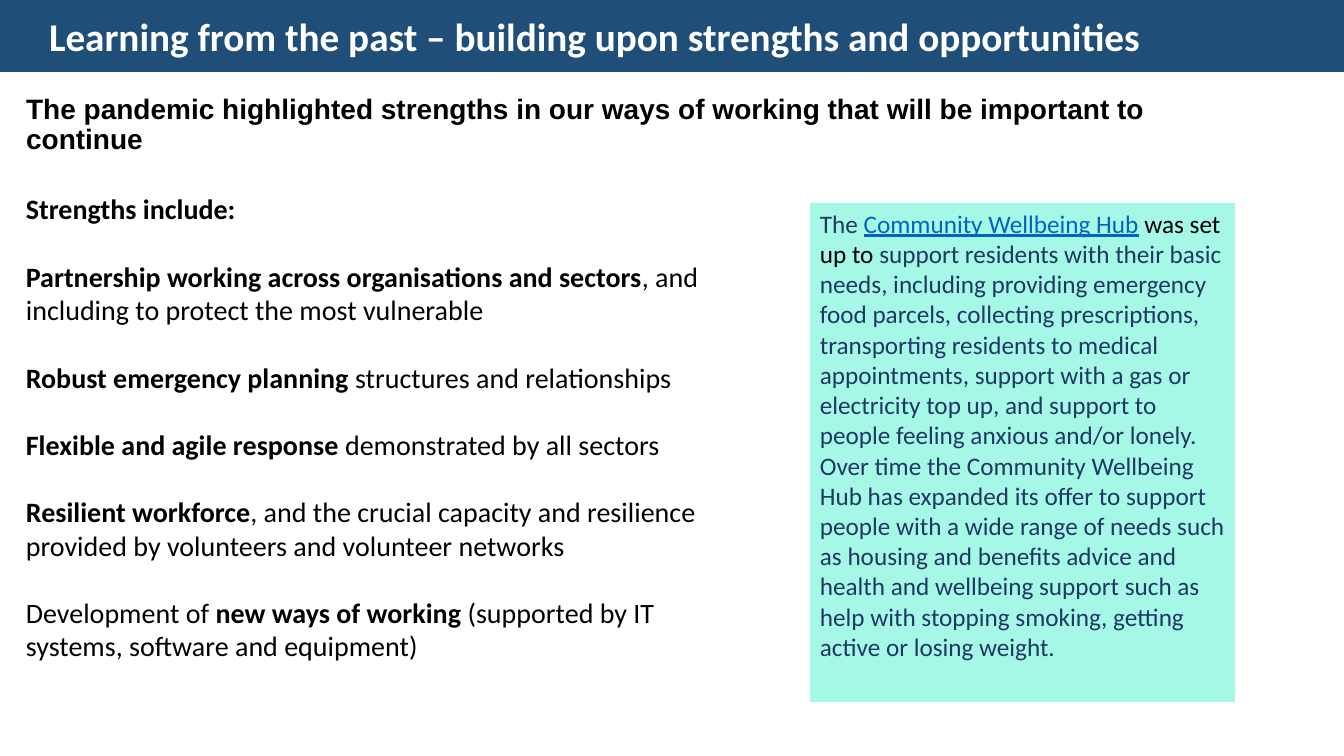
from lxml import etree
from pptx import Presentation
from pptx import util as u
from pptx.dml.color import RGBColor
from pptx.enum import shapes, text
from pptx.oxml import ns

PX_PER_INCH = 100.8
NAVY, MINT, WHITE, BLACK = "1F4E79", "A6F8E6", "FFFFFF", "000000"
INK, DEEP_INK, LINK = "203864", "1F3864", "0563C1"

STRENGTHS = [
    [("Strengths include:", True)],
    [("Partnership working across organisations and sectors", True),
     (", and including to protect the most vulnerable", False)],
    [("Robust emergency planning ", True), ("structures and relationships", False)],
    [("Flexible and agile response ", True), ("demonstrated by all sectors", False)],
    [("Resilient workforce", True),
     (", and the crucial capacity and resilience provided by volunteers and volunteer networks", False)],
    [("Development of ", False), ("new ways of working ", True),
     ("(supported by IT systems, software and equipment)", False)],
]
HUB_STORY = (
    "support residents with their basic needs, including providing emergency food parcels, "
    "collecting prescriptions, transporting residents to medical appointments, support with a gas "
    "or electricity top up, and support to people feeling anxious and/or lonely. Over time the "
    "Community Wellbeing Hub has expanded its offer to support people with a wide range of needs "
    "such as housing and benefits advice and health and wellbeing support such as help with "
    "stopping smoking, getting active or losing weight."
)


def px(length):
    return u.Emu(round(length * u.Inches(1) / PX_PER_INCH))


def colour(value):
    return RGBColor.from_string(value)


class SlideBuilder:
    """Holds the text style and the current slide, and adds each kind of element."""

    def __init__(self, presentation, font="Calibri"):
        self.font = font
        self.slide = presentation.slides.add_slide(presentation.slide_layouts[1])

    def place(self, shape, left, top, width, height):
        shape.left, shape.top, shape.width, shape.height = map(px, (left, top, width, height))

    def frame(self, shape, anchor=text.MSO_ANCHOR.TOP):
        frame = shape.text_frame
        frame.word_wrap = True
        frame.auto_size = text.MSO_AUTO_SIZE.NONE
        frame.vertical_anchor = anchor
        return frame

    def run(self, paragraph, words, size, ink=BLACK, bold=False, underline=False, font=None):
        run = paragraph.add_run()
        run.text = words
        run.font.name = font or self.font
        run.font.size = u.Pt(size)
        run.font.bold = bold
        run.font.underline = underline
        run.font.color.rgb = colour(ink)

    def title(self, words, box, indent):
        shape = self.slide.shapes.title
        self.place(shape, *box)
        shape.fill.solid()
        shape.fill.fore_color.rgb = colour(NAVY)
        frame = self.frame(shape, text.MSO_ANCHOR.MIDDLE)
        frame.margin_left = px(indent)
        paragraph = frame.paragraphs[0]
        paragraph.alignment = text.PP_ALIGN.LEFT
        self.run(paragraph, words, 28, WHITE, bold=True)

    def lead(self, words, box):
        shape = self.slide.placeholders[1]
        self.place(shape, *box)
        paragraph = self.frame(shape).paragraphs[0]
        properties = paragraph._p.get_or_add_pPr()
        properties.set("marL", "0")
        properties.set("indent", "0")
        etree.SubElement(properties, ns.qn("a:buNone"))
        paragraph.line_spacing = 0.9
        paragraph.space_before = u.Pt(0)
        self.run(paragraph, words, 20, bold=True, font="Arial")

    def statements(self, items, box, gap):
        frame = self.frame(self.slide.shapes.add_textbox(*map(px, box)))
        for index, item in enumerate(items):
            paragraph = frame.add_paragraph() if index else frame.paragraphs[0]
            paragraph.space_before = u.Pt(gap if index else 0)
            for words, bold in item:
                self.run(paragraph, words, 20, bold=bold)

    def panel(self, runs, box):
        shape = self.slide.shapes.add_shape(shapes.MSO_SHAPE.RECTANGLE, *map(px, box))
        shape.shadow.inherit = False
        shape.fill.solid()
        shape.fill.fore_color.rgb = colour(MINT)
        shape.line.fill.background()
        paragraph = self.frame(shape).paragraphs[0]
        paragraph.alignment = text.PP_ALIGN.LEFT
        for words, ink, underline in runs:
            self.run(paragraph, words, 18, ink, underline=underline)


def main():
    presentation = Presentation()
    presentation.slide_width, presentation.slide_height = px(1344), px(756)
    builder = SlideBuilder(presentation)
    builder.title("Learning from the past – building upon strengths and opportunities",
                  (0, 0, 1344, 72), indent=49)
    builder.lead("The pandemic highlighted strengths in our ways of working "
                 "that will be important to continue", (16, 90, 1239, 581))
    builder.statements(STRENGTHS, (16, 187, 711, 516), gap=24)
    builder.panel([
        ("The ", INK, False),
        ("Community Wellbeing Hub", LINK, True),
        (" was set up to ", BLACK, False),
        (HUB_STORY, DEEP_INK, False),
    ], (810, 203, 425, 499))
    presentation.save("out.pptx")


if __name__ == "__main__":
    main()
